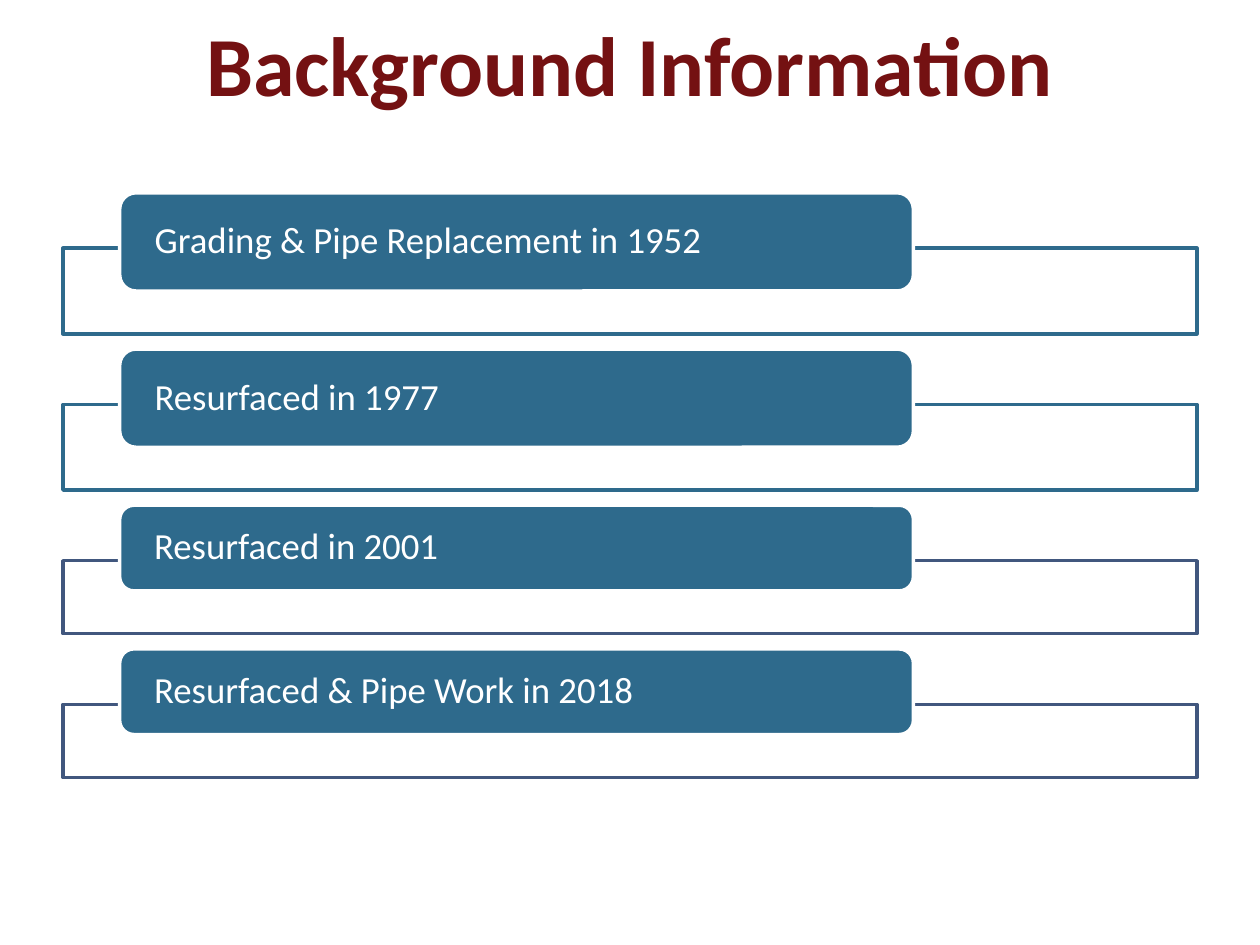
from dataclasses import dataclass

from lxml.etree import SubElement
from pptx import Presentation
from pptx.dml.color import RGBColor
from pptx.enum.shapes import MSO_SHAPE
from pptx.enum.text import MSO_ANCHOR, PP_ALIGN
from pptx.oxml.ns import qn
from pptx.util import Inches, Pt

WIDTH, HEIGHT = 10, 7.5
MARGIN = 0.05 * WIDTH
CONTENT_WIDTH = WIDTH - 2 * MARGIN
LABEL_INDENT = 0.05 * CONTENT_WIDTH
LABEL_WIDTH = 0.7 * CONTENT_WIDTH
FIRST_TOP = 1.53
EVENT_GAP = 0.12      # from a frame down to the next label
FRAME_OVERHANG = 0.34  # how far a frame reaches below its label
FRAME_SHORTER = 0.1   # frame height compared with label height

FONT = "Calibri"
WHITE, BLUE, INDIGO, MAROON = "FFFFFF", "2E6A8C", "41577E", "741112"


@dataclass
class RoadEvent:
    description: str
    label_height: float
    frame_color: str


EVENTS = [
    RoadEvent("Grading & Pipe Replacement in 1952", 0.78, BLUE),
    RoadEvent("Resurfaced in 1977", 0.78, BLUE),
    RoadEvent("Resurfaced in 2001", 0.68, INDIGO),
    RoadEvent("Resurfaced & Pipe Work in 2018", 0.68, INDIGO),
]


def rgb(color: str) -> RGBColor:
    return RGBColor.from_string(color)


def add_box(slide, kind: MSO_SHAPE, left: float, top: float, width: float,
            height: float, fill: str, line: str):
    box = slide.shapes.add_shape(
        kind, Inches(left), Inches(top), Inches(width), Inches(height))
    box.shadow.inherit = False
    box.fill.solid()
    box.fill.fore_color.rgb = rgb(fill)
    box.line.color.rgb = rgb(line)
    box.line.width = Pt(2)
    return box


def style_text(paragraph, size: int, color: str, bold: bool = False) -> None:
    font = paragraph.runs[0].font
    font.name, font.size, font.bold = FONT, Pt(size), bold
    font.color.rgb = rgb(color)


def add_event(slide, event: RoadEvent, top: float) -> float:
    """Draw one event and return the bottom of its frame."""
    frame_height = event.label_height - FRAME_SHORTER
    bottom = top + event.label_height + FRAME_OVERHANG

    # Frame behind the label
    frame = add_box(slide, MSO_SHAPE.RECTANGLE, MARGIN, bottom - frame_height,
                    CONTENT_WIDTH, frame_height, WHITE, event.frame_color)
    frame_fill = frame.fill._xPr.find(qn("a:solidFill"))
    SubElement(frame_fill[0], qn("a:alpha"), val="90000")

    # Label
    label = add_box(slide, MSO_SHAPE.ROUNDED_RECTANGLE, MARGIN + LABEL_INDENT,
                    top, LABEL_WIDTH, event.label_height, BLUE, WHITE)
    text = label.text_frame
    text.margin_left = text.margin_right = Inches(0.24)
    text.margin_top = text.margin_bottom = 0
    text.vertical_anchor = MSO_ANCHOR.MIDDLE
    text.word_wrap = True
    text.text = event.description
    paragraph = text.paragraphs[0]
    paragraph.alignment = PP_ALIGN.LEFT
    paragraph.line_spacing = 0.9
    style_text(paragraph, 21, WHITE)
    return bottom


def add_title(slide, wording: str) -> None:
    title = slide.shapes.title
    title.left, title.top = Inches(MARGIN), 0
    title.width, title.height = Inches(CONTENT_WIDTH), Inches(1)
    title.text_frame.text = wording
    title.text_frame.vertical_anchor = MSO_ANCHOR.MIDDLE
    paragraph = title.text_frame.paragraphs[0]
    paragraph.alignment = PP_ALIGN.CENTER
    style_text(paragraph, 48, MAROON, bold=True)


def main() -> None:
    deck = Presentation()
    deck.slide_width, deck.slide_height = Inches(WIDTH), Inches(HEIGHT)
    slide = deck.slides.add_slide(deck.slide_layouts[5])

    add_title(slide, "Background Information")

    # Events from the oldest down to the latest
    top = FIRST_TOP
    for event in EVENTS:
        top = add_event(slide, event, top) + EVENT_GAP

    deck.save("out.pptx")


if __name__ == "__main__":
    main()
